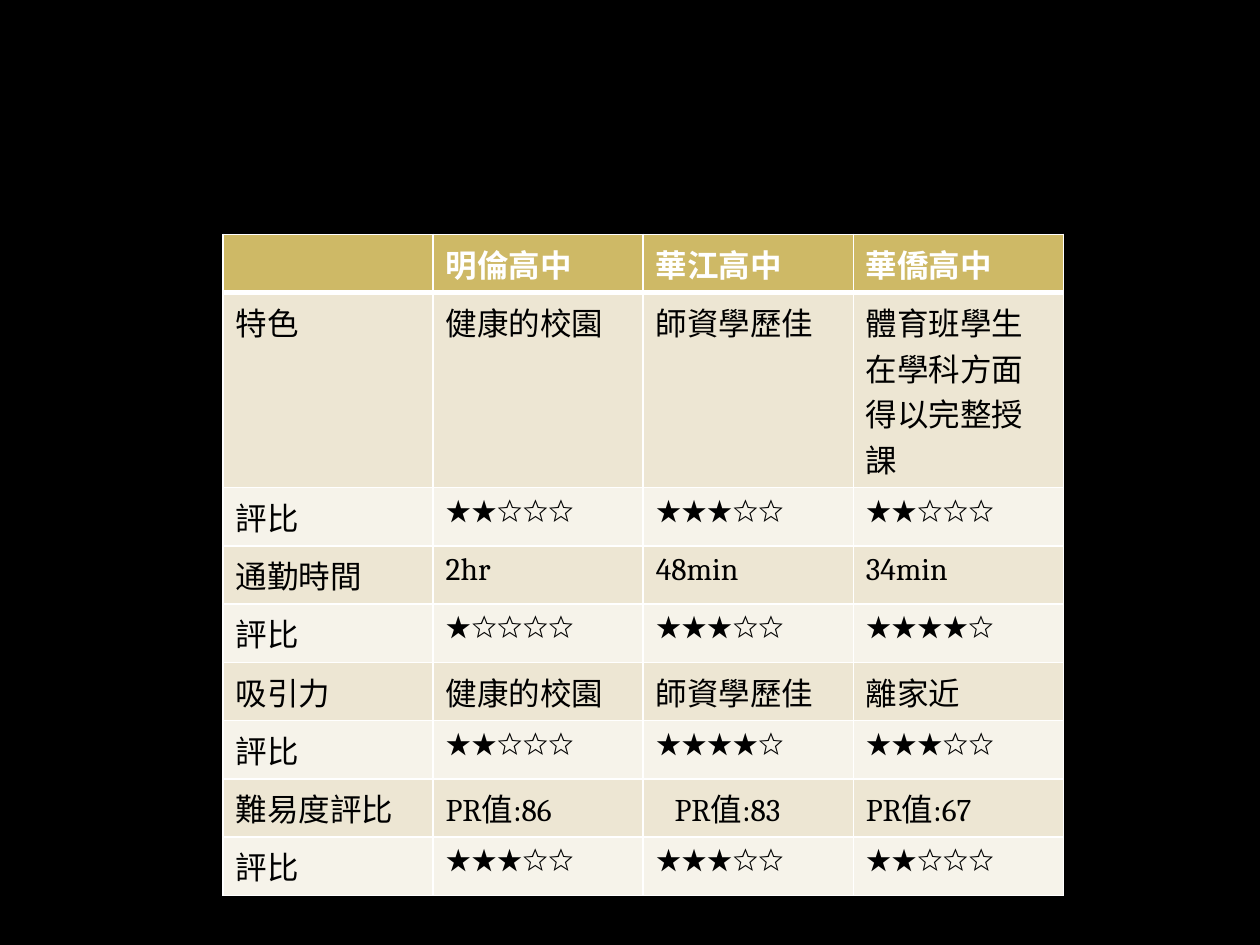
from pptx import Presentation
from pptx.dml.color import RGBColor
from pptx.oxml import parse_xml
from pptx.oxml.ns import nsdecls
from pptx.util import Inches, Pt

WIDTH, HEIGHT = 10, 7.5
LEFT, TOP, TABLE_WIDTH = 1.77, 1.86, 6.67
ROW_HEIGHT, TALL_ROW_HEIGHT = 0.41, 1.31
BLACK, WHITE, GOLD = "000000", "FFFFFF", "CEB966"
BANDS = ["EDE6D3", "F6F3EA"]
SCHOOLS = ["", "明倫高中", "華江高中", "華僑高中"]
CRITERIA = [
    ("特色", ["健康的校園", "師資學歷佳", "體育班學生在學科方面得以完整授課"], [2, 3, 2]),
    ("通勤時間", ["2hr", "48min", "34min"], [1, 3, 4]),
    ("吸引力", ["健康的校園", "師資學歷佳", "離家近"], [2, 4, 3]),
    ("難易度評比", ["PR值:86", "PR值:83", "PR值:67"], [3, 3, 2]),
]


def color(value):
    """Return the colour for a hex string."""
    return RGBColor.from_string(value)


def stars(score):
    """Return a five-star rating."""
    return "★" * score + "☆" * (5 - score)


def table_rows():
    """Return the header followed by a fact row and a rating row per criterion."""
    rows = [SCHOOLS]
    for name, facts, scores in CRITERIA:
        rows += [[name, *facts], ["評比", *map(stars, scores)]]
    return rows


def set_borders(cell, widths):
    """Draw white borders, widths in points by side."""
    tcPr = cell._tc.get_or_add_tcPr()
    for i, (side, width) in enumerate(widths.items()):
        tcPr.insert(i, parse_xml(
            f'<a:ln{side} {nsdecls("a")} w="{Pt(width)}"><a:solidFill>'
            f'<a:srgbClr val="{WHITE}"/></a:solidFill></a:ln{side}>'))


def fill_cell(cell, text, row):
    """Write and style one cell according to its row."""
    header = row == 0
    cell.fill.solid()
    cell.fill.fore_color.rgb = color(GOLD if header else BANDS[(row - 1) % 2])
    set_borders(cell, {"L": 1, "R": 1, "T": 3 if row == 1 else 1, "B": 3 if header else 1})
    p = cell.text_frame.paragraphs[0]
    p.text = text
    p.font.size = Pt(18)
    for r in p.runs:
        r.font.size = Pt(18)
        r.font.name = "Cambria"
        r.font.bold = header
        r.font.color.rgb = color(WHITE if header else BLACK)


def add_comparison(slide, rows):
    """Add the school comparison table."""
    cols = len(rows[0])
    height = ROW_HEIGHT * (len(rows) - 1) + TALL_ROW_HEIGHT
    table = slide.shapes.add_table(
        len(rows), cols, Inches(LEFT), Inches(TOP), Inches(TABLE_WIDTH), Inches(height)).table
    for column in table.columns:
        column.width = Inches(TABLE_WIDTH / cols)
    for i, texts in enumerate(rows):
        table.rows[i].height = Inches(TALL_ROW_HEIGHT if i == 1 else ROW_HEIGHT)
        for j, text in enumerate(texts):
            fill_cell(table.cell(i, j), text, i)
    return table


def indent(cell, inches):
    """Indent the first paragraph of a cell."""
    pPr = cell.text_frame.paragraphs[0]._p.get_or_add_pPr()
    pPr.set("marL", str(Inches(inches)))
    pPr.set("indent", "0")


def main():
    """Build and save the slide."""
    prs = Presentation()
    prs.slide_width, prs.slide_height = Inches(WIDTH), Inches(HEIGHT)
    slide = prs.slides.add_slide(prs.slide_layouts[6])
    fill = slide.background.fill
    fill.solid()
    fill.fore_color.rgb = color(BLACK)
    table = add_comparison(slide, table_rows())
    indent(table.cell(7, 2), 0.15)
    prs.save("out.pptx")


if __name__ == "__main__":
    main()
